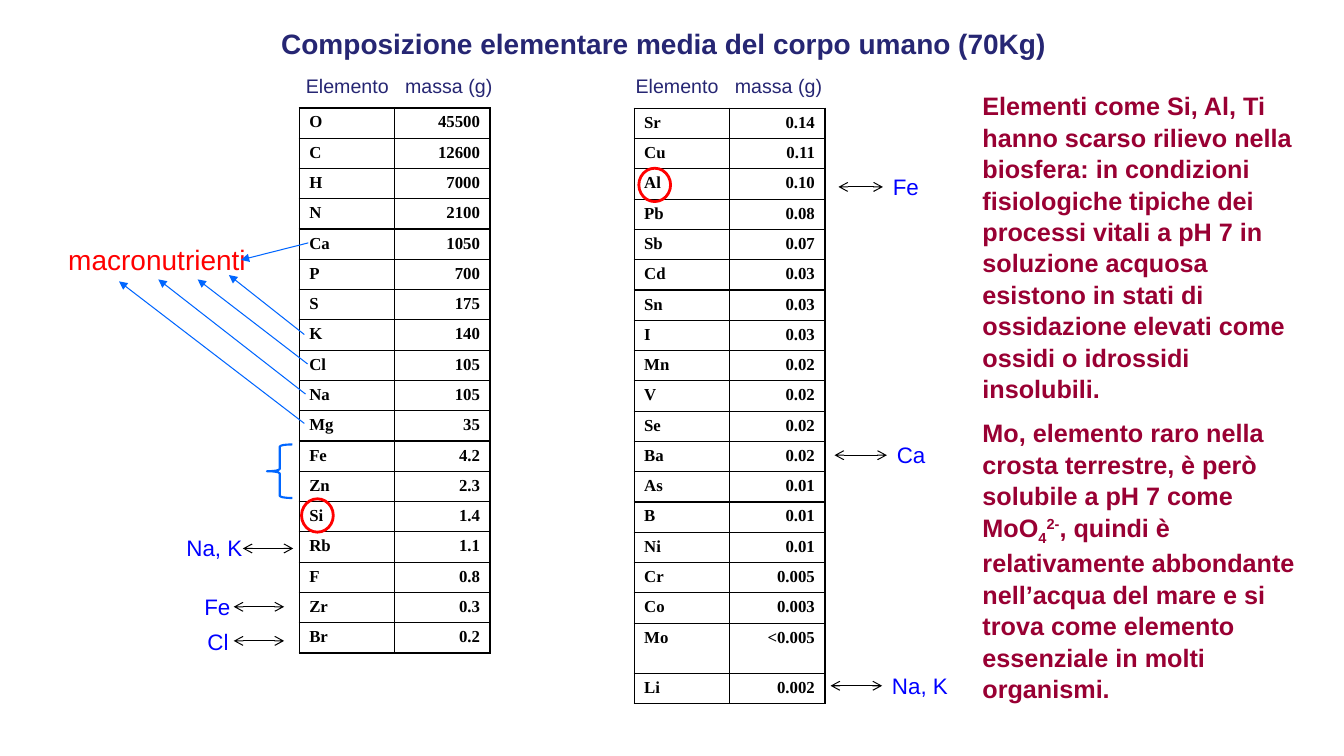
"""Build the slide on the average elemental composition of the human body."""
from dataclasses import dataclass
from typing import Optional

from lxml.etree import SubElement
from pptx import Presentation
from pptx.dml.color import RGBColor
from pptx.enum.shapes import MSO_CONNECTOR, MSO_SHAPE
from pptx.enum.text import MSO_AUTO_SIZE, PP_ALIGN
from pptx.oxml.ns import qn
from pptx.util import Cm, Pt

NAVY, BLACK, RED = "262673", "000000", "FF0000"
LABEL_BLUE, ARROW_BLUE, CRIMSON = "0000FF", "0066FF", "990033"
ROW_HEIGHT, TALL_ROW_HEIGHT = 0.76, 1.27
COLUMN_WIDTHS = (2.41, 2.4)
HEADING_TABS = (2.53, 5.03, 10.84, 13.34)


@dataclass
class MassTable:
    left: float
    top: float
    masses: dict[str, str]


@dataclass
class Substitute:
    text: str
    left: float
    top: float
    width: float
    arrow_start: float
    arrow_end: float
    arrow_y: float
    joined: bool


@dataclass
class Mark:
    preset: MSO_SHAPE
    left: float
    top: float
    width: float
    height: float
    color: str
    weight: float


TABLES = (
    MassTable(7.54, 2.72, {
        "O": "45500", "C": "12600", "H": "7000", "N": "2100", "Ca": "1050", "P": "700",
        "S": "175", "K": "140", "Cl": "105", "Na": "105", "Mg": "35", "Fe": "4.2",
        "Zn": "2.3", "Si": "1.4", "Rb": "1.1", "F": "0.8", "Zr": "0.3", "Br": "0.2"}),
    MassTable(15.98, 2.73, {
        "Sr": "0.14", "Cu": "0.11", "Al": "0.10", "Pb": "0.08", "Sb": "0.07", "Cd": "0.03",
        "Sn": "0.03", "I": "0.03", "Mn": "0.02", "V": "0.02", "Se": "0.02", "Ba": "0.02",
        "As": "0.01", "B": "0.01", "Ni": "0.01", "Cr": "0.005", "Co": "0.003",
        "Mo": "<0.005", "Li": "0.002"}),
)
MACRONUTRIENT_ARROWS = (
    (7.67, 8.43, 5.77, 6.93),
    (7.75, 9.17, 4.98, 7.04),
    (7.7, 9.93, 3.99, 7.04),
    (7.67, 10.67, 3.0, 7.09),
    (7.77, 6.12, 6.07, 6.55),
)
SUBSTITUTES = (
    Substitute("Cl", 4.98, 15.7, 1.04, 5.89, 7.16, 16.15, False),
    Substitute("Fe", 4.9, 14.83, 1.17, 5.89, 7.16, 15.29, False),
    Substitute("Na, K", 4.45, 13.34, 2.11, 6.12, 7.39, 13.82, False),
    Substitute("Fe", 22.25, 4.24, 1.17, 22.2, 21.13, 4.72, True),
    Substitute("Na, K", 22.23, 16.81, 2.11, 22.2, 20.93, 17.27, True),
    Substitute("Ca", 22.35, 11.0, 1.47, 22.3, 21.03, 11.46, True),
)
MARKS = (
    Mark(MSO_SHAPE.OVAL, 7.6, 12.57, 0.8, 0.84, RED, 2),
    Mark(MSO_SHAPE.OVAL, 16.1, 4.24, 0.8, 0.84, RED, 2),
    Mark(MSO_SHAPE.LEFT_BRACE, 6.73, 11.2, 0.64, 1.35, ARROW_BLUE, 1.5),
)
COMMENTS = (
    (("Elementi come Si, Al, Ti hanno scarso rilievo nella biosfera: in condizioni "
      "fisiologiche tipiche dei processi vitali a pH 7 in soluzione acquosa esistono in stati "
      "di ossidazione elevati come ossidi o idrossidi insolubili.", 0),),
    (("Mo, elemento raro nella crosta terrestre, è però solubile a pH 7 come MoO", 0),
     ("4", -25000), ("2-", 30000),
     (", quindi è relativamente abbondante nell’acqua del mare e si trova come elemento "
      "essenziale in molti organismi.", 0)),
)


def rgb(color: str) -> RGBColor:
    return RGBColor.from_string(color)


def style(paragraph, size: float, color: str, bold: bool = False, name: str = "Arial") -> None:
    font = paragraph.font
    font.size, font.bold, font.name = Pt(size), bold, name
    font.color.rgb = rgb(color)


def add_text_box(slide, left: float, top: float, width: float, height: float,
                 wrap: bool = True):
    shape = slide.shapes.add_textbox(Cm(left), Cm(top), Cm(width), Cm(height))
    shape.text_frame.word_wrap = wrap
    shape.text_frame.auto_size = MSO_AUTO_SIZE.SHAPE_TO_FIT_TEXT
    return shape


def add_label(slide, text: str, left: float, top: float, width: float, height: float,
              size: float, color: str):
    shape = add_text_box(slide, left, top, width, height, wrap=False)
    paragraph = shape.text_frame.paragraphs[0]
    paragraph.text = text
    style(paragraph, size, color)
    return shape


def add_arrow(slide, start_x: float, start_y: float, end_x: float, end_y: float,
              color: str, ends: dict[str, str]):
    connector = slide.shapes.add_connector(
        MSO_CONNECTOR.STRAIGHT, Cm(start_x), Cm(start_y), Cm(end_x), Cm(end_y))
    connector.line.color.rgb = rgb(color)
    connector.line.width = Pt(0.75)
    line = connector.line._get_or_add_ln()
    for end, kind in ends.items():
        SubElement(line, qn(f"a:{end}"), type=kind)
    SubElement(connector._element.spPr, qn("a:effectLst"))
    return connector


def add_heading(slide) -> None:
    frame = add_text_box(slide, 4.93, 0.46, 23.6, 2.16).text_frame
    title = frame.paragraphs[0]
    title.text = "Composizione elementare media del corpo umano (70Kg)"
    title.alignment = PP_ALIGN.CENTER
    style(title, 20, NAVY, bold=True)
    columns = frame.add_paragraph()
    columns.text = "\tElemento\tmassa (g)" * 2
    columns.space_before = Pt(8)
    title.line_spacing = columns.line_spacing = 1.1
    tabs = SubElement(columns._p.get_or_add_pPr(), qn("a:tabLst"))
    for position in HEADING_TABS:
        SubElement(tabs, qn("a:tab"), pos=str(Cm(position)), algn="l")
    style(columns, 14, NAVY)


def format_cell(cell, text: str, alignment: PP_ALIGN) -> None:
    paragraph = cell.text_frame.paragraphs[0]
    paragraph.text = text
    paragraph.alignment = alignment
    style(paragraph, 12, BLACK, bold=True, name="Times New Roman")
    properties = cell._tc.get_or_add_tcPr()
    for side in ("lnL", "lnR", "lnT", "lnB"):
        border = SubElement(properties, qn(f"a:{side}"), w=str(Pt(1)))
        SubElement(SubElement(border, qn("a:solidFill")), qn("a:srgbClr"), val=BLACK)
    cell.fill.background()


def add_mass_table(slide, data: MassTable) -> None:
    heights = [TALL_ROW_HEIGHT if name == "Mo" else ROW_HEIGHT for name in data.masses]
    table = slide.shapes.add_table(
        len(heights), 2, Cm(data.left), Cm(data.top),
        Cm(sum(COLUMN_WIDTHS)), Cm(sum(heights))).table
    table.first_row = table.horz_banding = False
    for column, width in zip(table.columns, COLUMN_WIDTHS):
        column.width = Cm(width)
    for row, height, (name, mass) in zip(table.rows, heights, data.masses.items()):
        row.height = Cm(height)
        format_cell(row.cells[0], name, PP_ALIGN.LEFT)
        format_cell(row.cells[1], mass, PP_ALIGN.RIGHT)


def add_substitute(slide, item: Substitute) -> None:
    label = add_label(slide, item.text, item.left, item.top, item.width, 0.94, 16, LABEL_BLUE)
    arrow = add_arrow(slide, item.arrow_start, item.arrow_y, item.arrow_end, item.arrow_y,
                      BLACK, {"headEnd": "arrow", "tailEnd": "arrow"})
    if item.joined:
        arrow.begin_connect(label, 1)
        arrow.end_y = arrow.begin_y


def add_mark(slide, mark: Mark) -> None:
    shape = slide.shapes.add_shape(
        mark.preset, Cm(mark.left), Cm(mark.top), Cm(mark.width), Cm(mark.height))
    shape.shadow.inherit = False
    shape.fill.background()
    shape.line.color.rgb = rgb(mark.color)
    shape.line.width = Pt(mark.weight)


def add_comments(slide) -> None:
    frame = add_text_box(slide, 24.51, 2.13, 8.46, 15.27).text_frame
    for index, pieces in enumerate(COMMENTS):
        paragraph: Optional[object] = frame.add_paragraph() if index else frame.paragraphs[0]
        if index:
            paragraph.space_before = Pt(9)
        paragraph.line_spacing = 1.04
        style(paragraph, 18, CRIMSON, bold=True)
        for text, baseline in pieces:
            run = paragraph.add_run()
            run.text = text
            if baseline:
                run.font._element.set("baseline", str(baseline))


def main() -> None:
    presentation = Presentation()
    presentation.slide_width, presentation.slide_height = Cm(33.87), Cm(19.05)
    slide = presentation.slides.add_slide(presentation.slide_layouts[6])
    add_heading(slide)
    for data in TABLES:
        add_mass_table(slide, data)
    add_label(slide, "macronutrienti", 1.47, 5.99, 5.28, 1.12, 20, RED)
    for points in MACRONUTRIENT_ARROWS:
        add_arrow(slide, *points, ARROW_BLUE, {"tailEnd": "triangle"})
    for item in SUBSTITUTES:
        add_substitute(slide, item)
    for mark in MARKS:
        add_mark(slide, mark)
    add_comments(slide)
    presentation.save("out.pptx")


if __name__ == "__main__":
    main()
